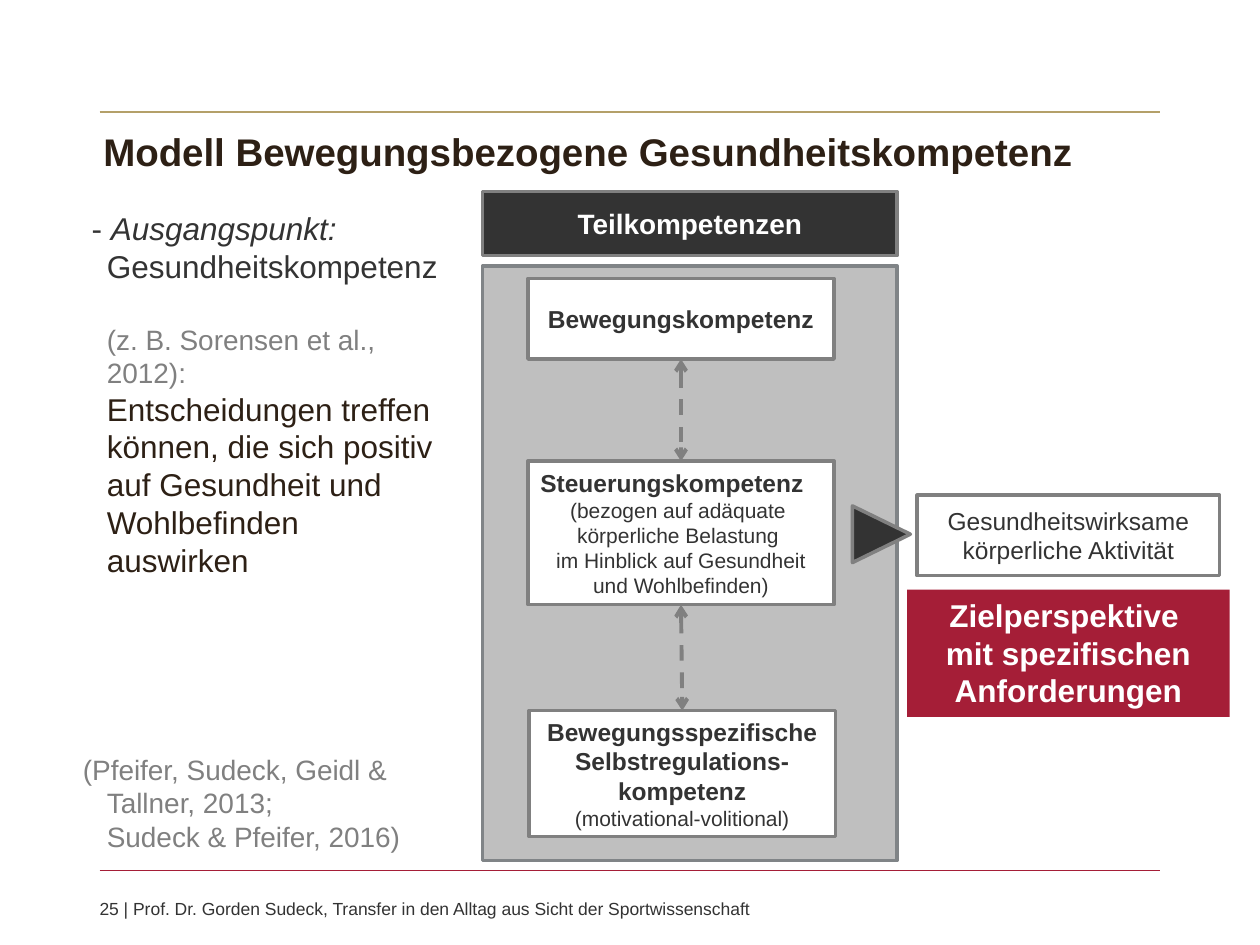
import lxml.etree
import pptx
import pptx.dml.color
import pptx.enum.dml
import pptx.enum.shapes
import pptx.enum.text
import pptx.oxml.ns
import pptx.util

SHAPE = pptx.enum.shapes.MSO_SHAPE
ALIGN = pptx.enum.text.PP_ALIGN
ANCHOR = pptx.enum.text.MSO_ANCHOR
EMU_PER_PX = 9144

WHITE = "FFFFFF"
DARK = "333333"
BROWN = "2D2015"
GREY = "808080"
RED = "A51E37"
GOLD = "B4A069"


def px(length):
    """Turn px (100 to the inch) into EMU."""
    return pptx.util.Emu(length * EMU_PER_PX)


def rgb(colour):
    """Turn a hex string into a colour."""
    return pptx.dml.color.RGBColor.from_string(colour)


class SlideBuilder:
    """Holds the style and the current slide."""

    font_name = "Arial"
    hanging = 19

    def __init__(self, slide):
        """Start drawing on the given slide."""
        self.slide = slide

    def style(self, font, size, colour, bold=False):
        """Set the look of a paragraph or run font."""
        font.name = self.font_name
        font.size = pptx.util.Pt(size)
        font.bold = bold
        font.color.rgb = rgb(colour)

    def fill_text(self, frame, paragraphs, colour, align):
        """Fill a frame with (text, size, bold[, align]) paragraphs."""
        frame.word_wrap = True
        for index, (text, size, bold, *own_align) in enumerate(paragraphs):
            paragraph = frame.add_paragraph() if index else frame.paragraphs[0]
            paragraph.text = text
            paragraph.alignment = own_align[0] if own_align else align
            self.style(paragraph.font, size, colour, bold)

    def box(self, place, fill, outline=GREY, paragraphs=(), colour=DARK,
            kind=SHAPE.RECTANGLE, anchor=ANCHOR.MIDDLE, side_inset=10):
        """Add a filled shape with centred text."""
        shape = self.slide.shapes.add_shape(kind, *map(px, place))
        shape.shadow.inherit = False
        shape.fill.solid()
        shape.fill.fore_color.rgb = rgb(fill)
        if outline:
            shape.line.color.rgb = rgb(outline)
            shape.line.width = pptx.util.Pt(2)
        else:
            shape.line.fill.background()
        frame = shape.text_frame
        frame.vertical_anchor = anchor
        frame.margin_left = frame.margin_right = px(side_inset)
        self.fill_text(frame, paragraphs, colour, ALIGN.CENTER)
        return shape

    def label(self, place, text, size, colour, bold=False, anchor=ANCHOR.TOP):
        """Add a line of text without insets."""
        frame = self.slide.shapes.add_textbox(*map(px, place)).text_frame
        frame.margin_left = frame.margin_right = 0
        frame.margin_top = frame.margin_bottom = 0
        frame.vertical_anchor = anchor
        self.fill_text(frame, [(text, size, bold)], colour, ALIGN.LEFT)

    def hanging_text(self, place, lines):
        """Add one hanging paragraph; each line is a list of (text, size, colour, italic)."""
        frame = self.slide.shapes.add_textbox(*map(px, place)).text_frame
        frame.word_wrap = True
        paragraph = frame.paragraphs[0]
        properties = paragraph._p.get_or_add_pPr()
        properties.set("marL", str(px(self.hanging)))
        properties.set("indent", str(-px(self.hanging)))
        for index, line in enumerate(lines):
            if index:
                paragraph.add_line_break()
            for text, size, colour, italic in line:
                run = paragraph.add_run()
                run.text = text
                self.style(run.font, size, colour)
                run.font.italic = italic

    def line(self, start, end, colour, width):
        """Add a straight line without shadow."""
        connector = self.slide.shapes.add_connector(
            pptx.enum.shapes.MSO_CONNECTOR.STRAIGHT, *map(px, start + end))
        connector.line.color.rgb = rgb(colour)
        connector.line.width = pptx.util.Pt(width)
        lxml.etree.SubElement(connector._element.spPr, pptx.oxml.ns.qn("a:effectLst"))
        return connector

    def double_arrow(self, upper, lower):
        """Join two boxes with a dashed two-headed arrow."""
        connector = self.line((0, 0), (0, 0), GREY, 2.25)
        connector.begin_connect(upper, 2)
        connector.end_connect(lower, 0)
        connector.line.dash_style = pptx.enum.dml.MSO_LINE.DASH
        outline = connector.line._get_or_add_ln()
        for end in ("a:headEnd", "a:tailEnd"):
            lxml.etree.SubElement(outline, pptx.oxml.ns.qn(end), type="arrow")


def main():
    """Build the slide and save it."""
    deck = pptx.Presentation()
    deck.slide_width, deck.slide_height = px(1000), px(750)
    page = SlideBuilder(deck.slides.add_slide(deck.slide_layouts[6]))

    for y, colour in ((89, GOLD), (691, RED)):
        page.line((79, y), (921, y), colour, 0.75)
    page.label((82, 101, 885, 37), "Modell Bewegungsbezogene Gesundheitskompetenz",
               22, BROWN, bold=True, anchor=ANCHOR.BOTTOM)

    page.box((728, 393, 240, 64), WHITE, side_inset=0,
             paragraphs=[("Gesundheitswirksame körperliche Aktivität", 14, False)])
    page.box((383, 211, 329, 472), "BFBFBF", outline="808487")
    page.box((383, 152, 329, 51), DARK, colour=WHITE,
             paragraphs=[("Teilkompetenzen", 16, True)])

    movement = page.box((419, 221, 243, 64), WHITE,
                        paragraphs=[("Bewegungskompetenz", 14, True)])
    control = page.box((419, 366, 243, 114), WHITE, paragraphs=[
        ("Steuerungskompetenz", 14, True, ALIGN.LEFT),
        ("(bezogen auf adäquate \nkörperliche Belastung \n"
         "im Hinblick auf Gesundheit und Wohlbefinden)", 12, False)])
    self_regulation = page.box((420, 564, 243, 100), WHITE, paragraphs=[
        ("Bewegungsspezifische Selbstregulations-kompetenz", 14, True),
        ("(motivational-volitional)", 12, False)])
    page.double_arrow(control, self_regulation)
    page.double_arrow(movement, control)

    page.box((720, 468, 256, 101), RED, outline=None, colour=WHITE, anchor=ANCHOR.TOP,
             paragraphs=[("Zielperspektive \nmit spezifischen Anforderungen", 18, True)])

    page.hanging_text((56, 161, 307, 307), [
        [(" - ", 18, DARK, False), ("Ausgangspunkt: ", 18, DARK, True)],
        [("Gesundheitskompetenz ", 18, DARK, False)],
        [("(z. B. Sorensen et al., 2012): ", 16, GREY, False)],
        [("Entscheidungen treffen können, die sich positiv auf Gesundheit "
          "und Wohlbefinden auswirken", 18, BROWN, False)]])
    page.hanging_text((56, 592, 307, 91), [
        [("(Pfeifer, Sudeck, Geidl & Tallner, 2013; ", 16, GREY, False)],
        [("Sudeck & Pfeifer, 2016)", 16, GREY, False)]])

    pointer = page.box((677, 401, 45, 46), DARK, kind=SHAPE.ISOSCELES_TRIANGLE)
    pointer.rotation = 90
    page.label((79, 713, 843, 34), "25 | Prof. Dr. Gorden Sudeck, Transfer in den Alltag "
               "aus Sicht der Sportwissenschaft", 10, DARK)

    deck.save("out.pptx")


if __name__ == "__main__":
    main()
